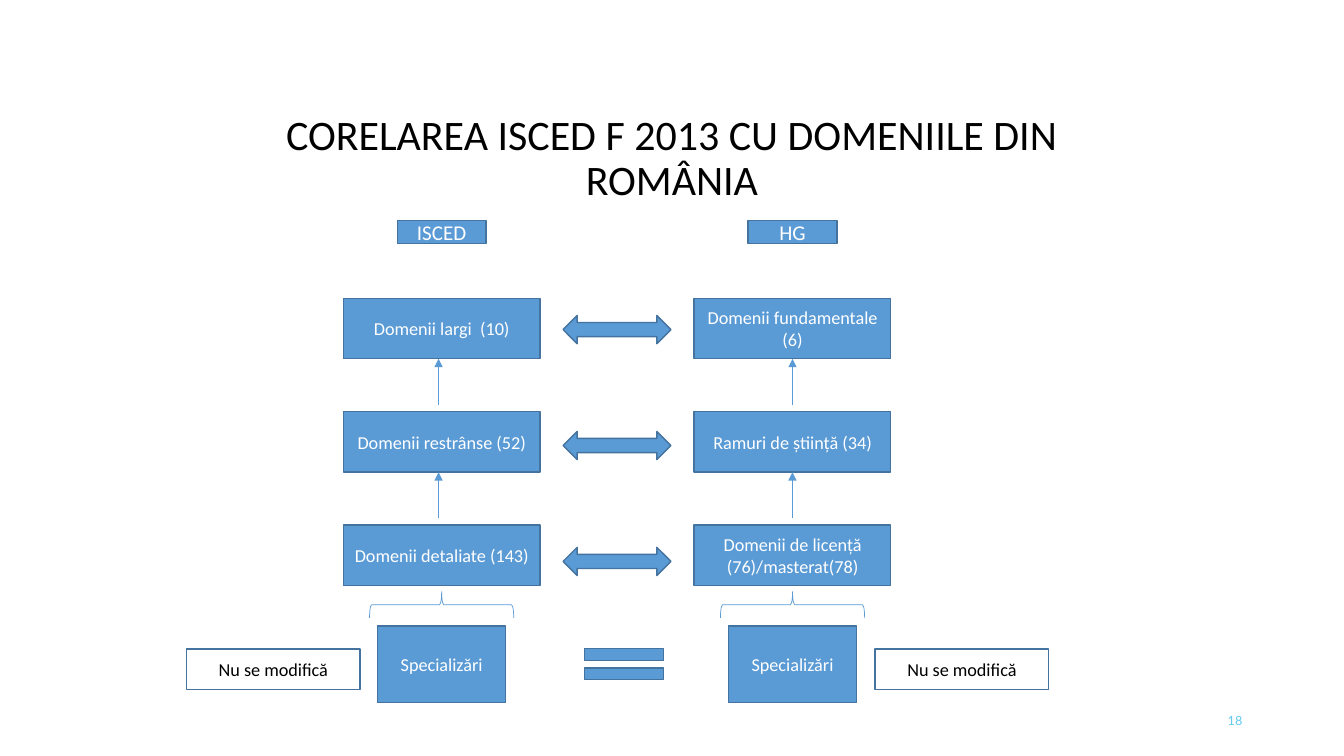
import pptx
import pptx.util
import pptx.dml.color
import pptx.enum.shapes
import pptx.enum.text
import pptx.oxml.ns
import lxml.etree

# Content
TITLE = "CORELAREA ISCED F 2013 CU DOMENIILE DIN ROMÂNIA"
PAGE_NUMBER = "18"
BASE_LABEL = "Specializări"
NOTE = "Nu se modifică"
COLUMNS = [
    {"header": "ISCED", "centre": 4.38, "link": 4.35, "note": 2.71,
     "levels": ["Domenii largi  (10)", "Domenii restrânse (52)", "Domenii detaliate (143)"]},
    {"header": "HG", "centre": 7.86, "link": 7.86, "note": 9.54,
     "levels": ["Domenii fundamentale (6)", "Ramuri de știință (34)",
                "Domenii de licență (76)/masterat(78)"]},
]

RGBColor = pptx.dml.color.RGBColor
BLUE = RGBColor(0x5B, 0x9B, 0xD5)
OUTLINE = RGBColor(0x43, 0x73, 0x9E)
CYAN = RGBColor(0x5F, 0xCB, 0xEF)
WHITE = RGBColor(0xFF, 0xFF, 0xFF)
BLACK = RGBColor(0, 0, 0)

# Grid, in inches
SLIDE_WIDTH, SLIDE_HEIGHT = 13.33, 7.5
HEADER_Y = 2.3
LEVEL_Y, LEVEL_STEP, LEVEL_HEIGHT = 3.26, 1.125, 0.6
ARROW_X, ARROW_Y, ARROW_STEP = 6.12, 3.27, 1.15
BRACE_Y, BASE_Y, NOTE_Y = 6.0, 6.59, 6.64

SHAPE = pptx.enum.shapes.MSO_SHAPE
ALIGN = pptx.enum.text.PP_ALIGN
Inches = pptx.util.Inches

presentation = pptx.Presentation()
presentation.slide_width = Inches(SLIDE_WIDTH)
presentation.slide_height = Inches(SLIDE_HEIGHT)
slide = presentation.slides.add_slide(presentation.slide_layouts[6])


def write(shape, text, size, color, font="Calibri", align=ALIGN.CENTER, side=0.1):
    frame = shape.text_frame
    frame.word_wrap = True
    frame.vertical_anchor = pptx.enum.text.MSO_ANCHOR.MIDDLE
    frame.margin_left = frame.margin_right = Inches(side)
    frame.margin_top = frame.margin_bottom = 0
    paragraph = frame.paragraphs[0]
    paragraph.alignment = align
    run = paragraph.add_run()
    run.text = text
    run.font.name = font
    run.font.size = pptx.util.Pt(size)
    run.font.color.rgb = color
    return paragraph


def add_text(left, top, width, height, *text, **style):
    box = slide.shapes.add_textbox(Inches(left), Inches(top), Inches(width), Inches(height))
    return write(box, *text, **style)


def add_centred(kind, x, y, width, height, fill=BLUE, line=OUTLINE, weight=1):
    shape = slide.shapes.add_shape(kind, Inches(x - width / 2), Inches(y - height / 2),
                                   Inches(width), Inches(height))
    shape.shadow.inherit = False
    if fill is None:
        shape.fill.background()
    else:
        shape.fill.solid()
        shape.fill.fore_color.rgb = fill
    shape.line.color.rgb = line
    shape.line.width = pptx.util.Pt(weight)
    return shape


def add_box(x, y, width, height, text, size=13, color=WHITE, fill=BLUE):
    box = add_centred(SHAPE.RECTANGLE, x, y, width, height, fill)
    write(box, text, size, color, side=0.07)


def add_up_arrow(x, start, end):
    arrow = slide.shapes.add_connector(pptx.enum.shapes.MSO_CONNECTOR.STRAIGHT,
                                       Inches(x), Inches(start), Inches(x), Inches(end))
    arrow.line.color.rgb = BLUE
    arrow.line.width = pptx.util.Pt(0.5)
    line = arrow.line._get_or_add_ln()
    lxml.etree.SubElement(line, pptx.oxml.ns.qn("a:tailEnd"), type="triangle")
    lxml.etree.SubElement(arrow._element.spPr, pptx.oxml.ns.qn("a:effectLst"))


# Title
add_text(1.86, 1.09, 9.61, 0.98, TITLE, 30, BLACK).line_spacing = 0.9

# Two classification columns
for column in COLUMNS:
    centre = column["centre"]
    add_box(centre, HEADER_Y, 0.88, 0.23, column["header"], size=15)
    for row, label in enumerate(column["levels"]):
        y = LEVEL_Y + row * LEVEL_STEP
        add_box(centre, y, 1.95, LEVEL_HEIGHT, label)
        if row > 0:
            add_up_arrow(column["link"], y - LEVEL_HEIGHT / 2 - 0.07,
                         y - LEVEL_STEP + LEVEL_HEIGHT / 2)
    brace = add_centred(SHAPE.LEFT_BRACE, centre, BRACE_Y, 0.26, 1.43, None, BLUE, 0.5)
    brace.rotation = 90
    add_box(centre, BASE_Y, 1.27, 0.76, BASE_LABEL)
    add_box(column["note"], NOTE_Y, 1.72, 0.4, NOTE, color=BLACK, fill=None)

# Correspondence between the columns
for row in range(len(COLUMNS[0]["levels"])):
    add_centred(SHAPE.LEFT_RIGHT_ARROW, ARROW_X, ARROW_Y + row * ARROW_STEP, 1.07, 0.28)
equal = add_centred(SHAPE.MATH_EQUAL, 6.19, BASE_Y, 1.07, 0.5)
equal.adjustments[0] = 0.235
equal.adjustments[1] = 0.144

# Page number
add_text(9.42, 6.95, 3, 0.4, PAGE_NUMBER, 9, CYAN, font="Lato", align=ALIGN.RIGHT)

presentation.save("out.pptx")
